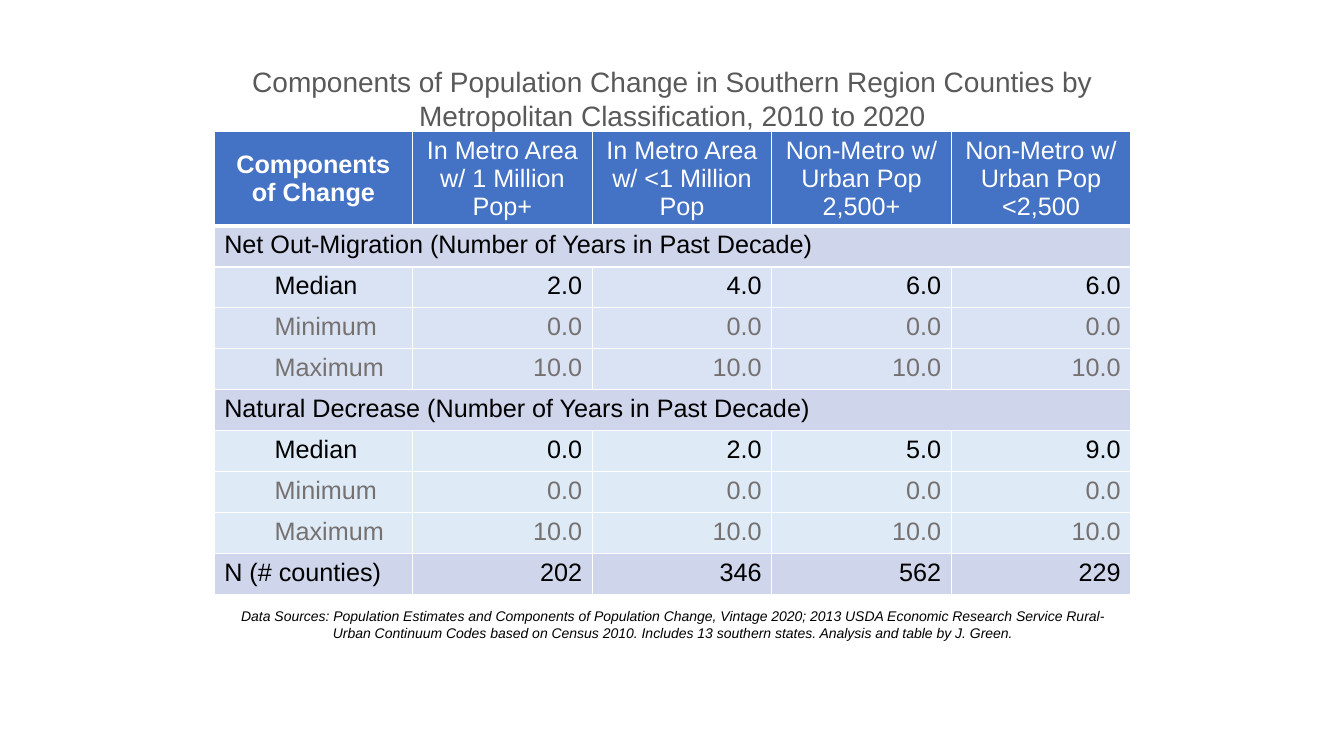
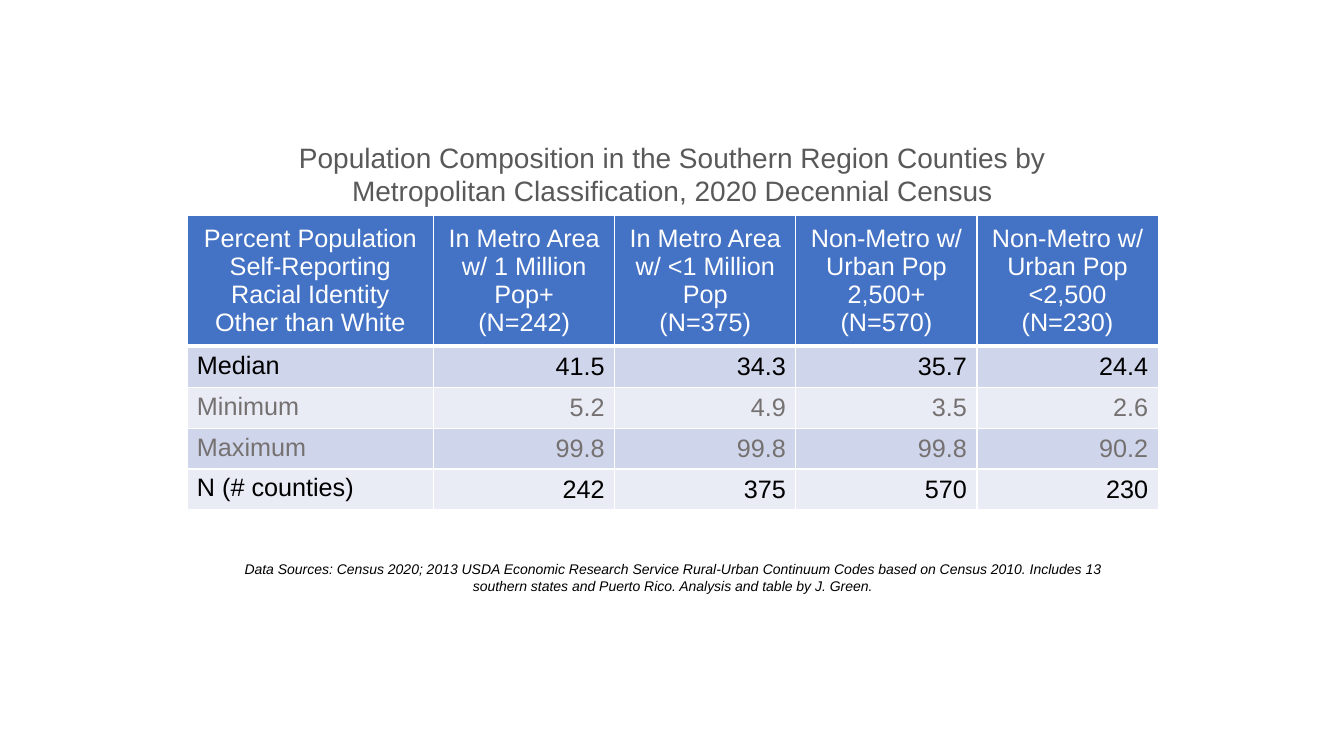
import pptx
import pptx.dml.color
import pptx.enum.text
import pptx.oxml
import pptx.oxml.ns
import pptx.util

PX = 9525
FONT = "Arial"
WHITE, BLACK, MUTED, TITLE = "FFFFFF", "000000", "767171", "595959"
HEADER, BAND, LIGHT = "4472C4", "CFD5EA", "E9EBF5"
MIGRATION, DECREASE = "DAE3F3", "DEEBF7"
ROW_HEIGHT = 39
CAPTION_LEFT, CAPTION_WIDTH = 204, 873
ALIGN = pptx.enum.text.PP_ALIGN
ANCHOR = pptx.enum.text.MSO_ANCHOR
CLASSES = [
    "In Metro Area w/ 1 Million Pop+",
    "In Metro Area w/ <1 Million Pop",
    "Non-Metro w/ Urban Pop 2,500+",
    "Non-Metro w/ Urban Pop\n<2,500",
]


def px(n):
    return pptx.util.Emu(n * PX)


def rgb(value):
    return pptx.dml.color.RGBColor.from_string(value)


def write(tf, text, size, color, align, bold=False, italic=False, level=0):
    tf.text = text
    for p in tf.paragraphs:
        p.alignment = align
        p.level = level
        for r in p.runs:
            r.font.name = FONT
            r.font.size = pptx.util.Pt(size)
            r.font.color.rgb = rgb(color)
            r.font.bold = bold
            r.font.italic = italic


def add_caption(s, top, height, text, size, color, italic=False):
    box = s.shapes.add_textbox(px(CAPTION_LEFT), px(top), px(CAPTION_WIDTH), px(height))
    tf = box.text_frame
    tf.word_wrap = True
    tf.auto_size = pptx.enum.text.MSO_AUTO_SIZE.SHAPE_TO_FIT_TEXT
    write(tf, text, size, color, ALIGN.CENTER, italic=italic)


def add_title(s, top, text):
    add_caption(s, top, 74, text, 20, TITLE)


def add_source(s, top, text):
    add_caption(s, top, 42, text, 10, BLACK, italic=True)


def set_borders(cell, top=1, bottom=1):
    tc_pr = cell._tc.get_or_add_tcPr()
    for side, points in (("L", 1), ("R", 1), ("T", top), ("B", bottom)):
        tc_pr.append(pptx.oxml.parse_xml(
            f'<a:ln{side} {pptx.oxml.ns.nsdecls("a")} w="{pptx.util.Pt(points)}">'
            f'<a:solidFill><a:srgbClr val="{WHITE}"/></a:solidFill></a:ln{side}>'))


def fill_cell(cell, color):
    cell.fill.solid()
    cell.fill.fore_color.rgb = rgb(color)


def add_header(table, labels, bold_first):
    for i, label in enumerate(labels):
        cell = table.cell(0, i)
        set_borders(cell, bottom=3)
        fill_cell(cell, HEADER)
        cell.vertical_anchor = ANCHOR.MIDDLE
        write(cell.text_frame, label, 18, WHITE, ALIGN.CENTER, bold=bold_first and i == 0)


def add_row(table, index, fill, label, values, level, value_anchor):
    color = MUTED if label in ("Minimum", "Maximum") else BLACK
    cells = [table.cell(index, i) for i in range(len(table.columns))]
    for cell in cells:
        set_borders(cell, top=3 if index == 1 else 1)
        fill_cell(cell, fill)
    write(cells[0].text_frame, label, 18, color, ALIGN.LEFT, level=level)
    if not values:
        cells[0].merge(cells[-1])
    for cell, value in zip(cells[1:], values):
        cell.vertical_anchor = value_anchor
        write(cell.text_frame, value, 18, color, ALIGN.RIGHT)


def add_data_table(s, left, top, width, label_width, header_height, labels, rows,
                   bold_first=False, value_anchor=ANCHOR.TOP):
    height = header_height + ROW_HEIGHT * len(rows)
    frame = s.shapes.add_table(len(rows) + 1, len(labels), px(left), px(top), px(width), px(height))
    table = frame.table
    for column in table.columns:
        column.width = px(width - label_width) // (len(labels) - 1)
    table.columns[0].width = px(label_width)
    for row in table.rows:
        row.height = px(ROW_HEIGHT)
    table.rows[0].height = px(header_height)
    add_header(table, labels, bold_first)
    for index, (fill, label, values, level) in enumerate(rows, 1):
        add_row(table, index, fill, label, values.split(), level, value_anchor)


def statistic_group(fill, heading, medians):
    return [
        (BAND, heading, "", 0),
        (fill, "Median", medians, 1),
        (fill, "Minimum", "0.0 0.0 0.0 0.0", 1),
        (fill, "Maximum", "10.0 10.0 10.0 10.0", 1),
    ]


def build_change_slide(s):
    rows = [
        *statistic_group(MIGRATION, "Net Out-Migration (Number of Years in Past Decade)",
                         "2.0 4.0 6.0 6.0"),
        *statistic_group(DECREASE, "Natural Decrease (Number of Years in Past Decade)",
                         "0.0 2.0 5.0 9.0"),
        (BAND, "N (# counties)", "202 346 562 229", 0),
    ]
    add_data_table(s, 204, 125, 873, 189, 90, ["Components of Change", *CLASSES], rows,
                   bold_first=True)
    add_source(s, 574, "Data Sources: Population Estimates and Components of Population Change, "
               "Vintage 2020; 2013 USDA Economic Research Service Rural-Urban Continuum Codes "
               "based on Census 2010. Includes 13 southern states. Analysis and table by J. Green.")
    add_title(s, 57, "Components of Population Change in Southern Region Counties by "
              "Metropolitan Classification, 2010 to 2020")


def build_composition_slide(s):
    counts = "242 375 570 230"
    labels = ["Percent Population Self-Reporting\nRacial Identity Other than White"]
    labels += [f"{name}\n(N={n})" for name, n in zip(CLASSES, counts.split())]
    rows = [
        (BAND, "Median", "41.5 34.3 35.7 24.4", 0),
        (LIGHT, "Minimum", "5.2 4.9 3.5 2.6", 0),
        (BAND, "Maximum", "99.8 99.8 99.8 90.2", 0),
        (LIGHT, "N (# counties)", counts, 0),
    ]
    add_data_table(s, 178, 205, 925, 235, 117, labels, rows, value_anchor=ANCHOR.MIDDLE)
    add_source(s, 529, "Data Sources: Census 2020; 2013 USDA Economic Research Service "
               "Rural-Urban Continuum Codes based on Census 2010. Includes 13 southern states "
               "and Puerto Rico. Analysis and table by J. Green.")
    add_title(s, 129, "Population Composition in the Southern Region Counties by "
              "Metropolitan Classification, 2020 Decennial Census")


def main():
    prs = pptx.Presentation()
    prs.slide_width, prs.slide_height = px(1280), px(720)
    for build in (build_change_slide, build_composition_slide):
        build(prs.slides.add_slide(prs.slide_layouts[6]))
    prs.save("out.pptx")


if __name__ == "__main__":
    main()
